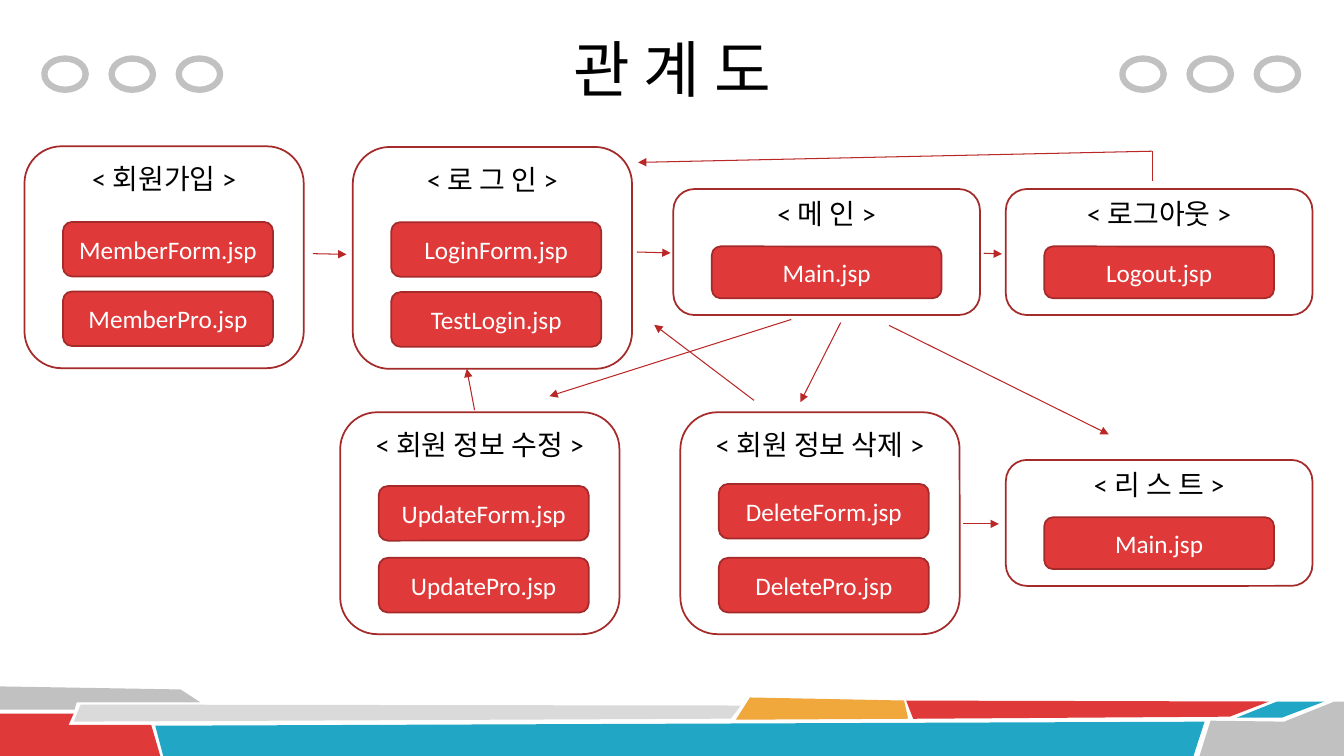
from dataclasses import dataclass

from lxml import etree
from pptx import Presentation
from pptx.dml.color import RGBColor
from pptx.enum.shapes import MSO_CONNECTOR, MSO_SHAPE
from pptx.enum.text import MSO_ANCHOR, MSO_AUTO_SIZE, PP_ALIGN
from pptx.oxml.ns import qn
from pptx.util import Pt

OVAL = MSO_SHAPE.OVAL
ROUND = MSO_SHAPE.ROUNDED_RECTANGLE
STRAIGHT = MSO_CONNECTOR.STRAIGHT
TOP, MIDDLE = MSO_ANCHOR.TOP, MSO_ANCHOR.MIDDLE
CENTER = PP_ALIGN.CENTER
NO_FIT = MSO_AUTO_SIZE.NONE

BLACK = RGBColor(0, 0, 0)
WHITE = RGBColor(255, 255, 255)
RED = RGBColor(0xDF, 0x39, 0x39)
BROWN = RGBColor(0xA5, 0x2A, 0x2A)
CRIMSON = RGBColor(0xB9, 0x27, 0x27)
GRAY = RGBColor(0xC1, 0xC1, 0xC1)
PALE = RGBColor(0xDA, 0xDA, 0xDA)
TEAL = RGBColor(0x21, 0xA6, 0xC5)
GOLD = RGBColor(0xF0, 0xA7, 0x3C)
FONT = "Calibri"


@dataclass
class Size:
    """Measures shared by the cards of one size."""
    wide: float
    high: float
    inset: float
    pill_wide: float
    pill_high: float


@dataclass
class Card:
    name: str
    left: float
    top: float
    size: Size
    pages: dict[str, float]  # page name: offset from the card top


@dataclass
class Arrow:
    start: tuple[float, float]
    end: tuple[float, float]
    head: bool = True


@dataclass
class Band:
    color: RGBColor
    points: list[tuple[float, float]]


LARGE = Size(199.5, 158.5, 3.5, 150, 39)
SMALL = Size(219, 90, 0.8, 164, 37)
PAD = 27.5

CARDS = [
    Card("리 스 트", 718.5, 328.5, SMALL, {"Main.jsp": 41}),
    Card("회원 정보 수정", 243, 294.5, LARGE,
         {"UpdateForm.jsp": 52.7, "UpdatePro.jsp": 104}),
    Card("회원가입", 17.5, 104.5, LARGE,
         {"MemberForm.jsp": 54, "MemberPro.jsp": 103.7}),
    Card("회원 정보 삭제", 486, 294.5, LARGE,
         {"DeleteForm.jsp": 51.2, "DeletePro.jsp": 104}),
    Card("로 그 인", 252, 105, LARGE,
         {"LoginForm.jsp": 53.7, "TestLogin.jsp": 103.7}),
    Card("메 인", 481, 135, SMALL, {"Main.jsp": 41}),
    Card("로그아웃", 718.5, 135, SMALL, {"Logout.jsp": 41}),
]

ARROWS = [
    Arrow((455, 180), (479, 180.7)),
    Arrow((223.5, 181.2), (247.5, 181.7)),
    Arrow((702.7, 180.9), (715.7, 181.4)),
    Arrow((565.2, 228.2), (392.4, 283)),
    Arrow((600.5, 230.4), (571.7, 287.3)),
    Arrow((635, 232.4), (792, 310.3)),
    Arrow((688, 374.2), (713.5, 374.2)),
    Arrow((823, 108), (455.8, 116)),
    Arrow((823, 108), (823, 129), head=False),
    Arrow((538.6, 286), (467.3, 232)),
    Arrow((339, 293), (333.4, 263.5)),
]

BANDS = [
    Band(GRAY, [(0, 490.3), (129, 492.5), (143.3, 501.8), (54.7, 501.8),
                (53.3, 506.9), (0, 506.9)]),
    Band(RED, [(0, 509.8), (52.6, 509.8), (49, 517.7), (108, 517.7),
               (114.5, 540), (0, 540)]),
    Band(PALE, [(57.6, 503.3), (529.2, 504), (522, 513.4), (52.6, 515.5)]),
    Band(TEAL, [(110.9, 518.4), (860.4, 515.5), (852.5, 540), (116.6, 540)]),
    Band(GOLD, [(535.7, 498.2), (645.8, 500.4), (648.7, 513.4),
                (525.6, 514.1)]),
    Band(RED, [(647.3, 500.4), (906.5, 501.1), (878.4, 511.9),
               (652.3, 513.4)]),
    Band(TEAL, [(912.2, 501.1), (946, 501.1), (915.8, 512.6),
                (883.4, 512.6)]),
    Band(GRAY, [(864.7, 514.8), (917.3, 515.5), (953.3, 501.1), (960, 501.1),
                (960, 540), (856.8, 540)]),
]


def write(shape, text: str, *, size: float, color: RGBColor,
          anchor=MIDDLE, inset: float = 3.6) -> None:
    frame = shape.text_frame
    frame.word_wrap = True
    frame.auto_size = NO_FIT
    frame.vertical_anchor = anchor
    frame.margin_top = frame.margin_bottom = Pt(inset)
    line = frame.paragraphs[0]
    line.alignment = CENTER
    run = line.add_run()
    run.text = text
    run.font.name = FONT
    run.font.size = Pt(size)
    run.font.color.rgb = color


def draw_box(slide, kind, left: float, top: float, wide: float, high: float,
             *, fill: RGBColor | None, edge: RGBColor, width: float):
    box = slide.shapes.add_shape(kind, Pt(left), Pt(top), Pt(wide), Pt(high))
    box.shadow.inherit = False
    if fill is None:
        box.fill.background()
    else:
        box.fill.solid()
        box.fill.fore_color.rgb = fill
    box.line.color.rgb = edge
    box.line.width = Pt(width)
    return box


def draw_band(slide, band: Band) -> None:
    first, *rest = [(Pt(x), Pt(y)) for x, y in band.points]
    path = slide.shapes.build_freeform(*first)
    path.add_line_segments(rest, close=True)
    shape = path.convert_to_shape()
    shape.shadow.inherit = False
    shape.fill.solid()
    shape.fill.fore_color.rgb = band.color
    shape.line.fill.background()


def draw_card(slide, card: Card) -> None:
    size = card.size
    box = draw_box(slide, ROUND, card.left, card.top, size.wide, size.high,
                   fill=WHITE, edge=BROWN, width=1.25)
    write(box, f"< {card.name} >", size=20, color=BLACK, anchor=TOP,
          inset=size.inset)
    for page, drop in card.pages.items():
        pill = draw_box(slide, ROUND, card.left + PAD, card.top + drop,
                        size.pill_wide, size.pill_high,
                        fill=RED, edge=BROWN, width=1.25)
        write(pill, page, size=18, color=WHITE)


def draw_arrow(slide, arrow: Arrow) -> None:
    ends = [Pt(n) for n in (*arrow.start, *arrow.end)]
    link = slide.shapes.add_connector(STRAIGHT, *ends)
    link.line.color.rgb = CRIMSON
    link.line.width = Pt(0.75)
    if arrow.head:
        etree.SubElement(link.line._get_or_add_ln(), qn("a:tailEnd"),
                         type="triangle")
    etree.SubElement(link._element.spPr, qn("a:effectLst"))


def main() -> None:
    deck = Presentation()
    deck.slide_width, deck.slide_height = Pt(960), Pt(540)
    slide = deck.slides.add_slide(deck.slide_layouts[5])

    # Footer bands and the rings beside the title
    for band in BANDS:
        draw_band(slide, band)
    for side in (31.7, 801.7):
        for i in range(3):
            draw_box(slide, OVAL, side + 48 * i, 41.8, 29.5, 22.3,
                     fill=None, edge=GRAY, width=4.5)

    # Title
    title = slide.shapes.title
    title.left, title.top = Pt(168), Pt(8.6)
    title.width, title.height = Pt(624), Pt(80)
    write(title, "관 계 도", size=44, color=BLACK)

    # Page groups and the flow between them
    for card in CARDS:
        draw_card(slide, card)
    for arrow in ARROWS:
        draw_arrow(slide, arrow)

    deck.save("out.pptx")


if __name__ == "__main__":
    main()
